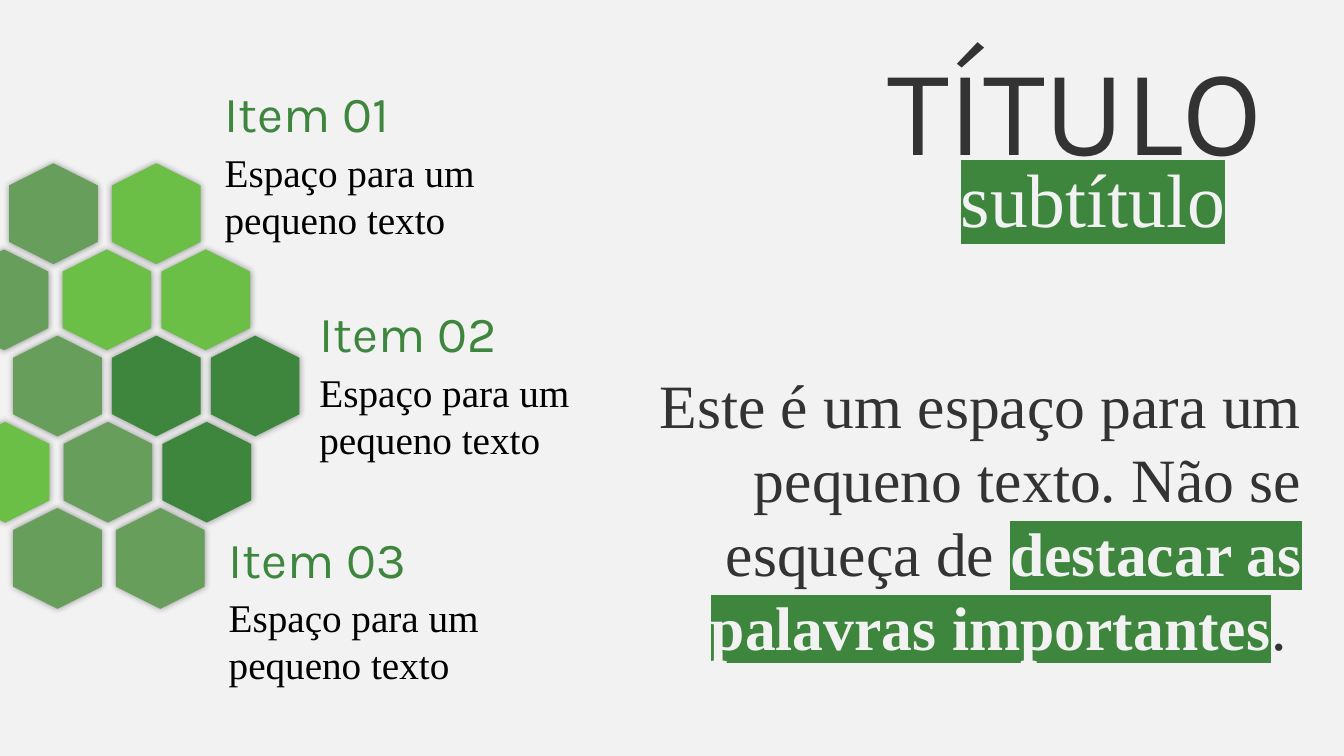
from lxml import etree
from pptx import Presentation
from pptx.dml.color import RGBColor
from pptx.enum.shapes import MSO_SHAPE
from pptx.enum.text import MSO_AUTO_SIZE, PP_ALIGN
from pptx.oxml.ns import qn
from pptx.util import Inches, Pt

HEXAGON = MSO_SHAPE.HEXAGON
GROW = MSO_AUTO_SIZE.SHAPE_TO_FIT_TEXT
LEFT, RIGHT = PP_ALIGN.LEFT, PP_ALIGN.RIGHT

COLORS = {
    "paper": "F2F2F2", "ink": "333333", "black": "000000",
    "dark": "3E863D", "sage": "679E5B", "lime": "6BBF47",
}
HEADING_FONT, BODY_FONT = "Karla", "Times New Roman"

TITLE, SUBTITLE = "TÍTULO", "subtítulo"
# Each span: text, whether it is highlighted
MESSAGE = [
    ("Este é um espaço para um pequeno texto. Não se esqueça de ", False),
    ("destacar as palavras importantes", True),
    (". ", False),
]
# Heading, text, left, top
ITEMS = [
    ("Item 01", "Espaço para um pequeno texto", 2.13, 0.77),
    ("Item 02", "Espaço para um pequeno texto", 3.07, 2.95),
    ("Item 03", "Espaço para um pequeno texto", 2.17, 5.19),
]
ITEM_TEXT_DROP = 0.65

# Honeycomb rows from top to bottom: left and colour of each cell
HONEYCOMB = [
    [(0.03, "sage"), (1.05, "lime")],
    [(-0.46, "sage"), (0.56, "lime"), (1.54, "lime")],
    [(0.07, "sage"), (1.05, "dark"), (2.03, "dark")],
    [(-0.45, "lime"), (0.57, "sage"), (1.55, "dark")],
    [(0.07, "sage"), (1.09, "sage")],
]
HONEYCOMB_TOP, ROW_PITCH = 1.68, 0.855
CELL_WIDTH, CELL_HEIGHT = 1, 0.88


def color(name):
    return RGBColor.from_string(COLORS[name])


def add_color_element(parent, tag, name):
    element = etree.SubElement(parent, qn(tag))
    return etree.SubElement(element, qn("a:srgbClr"), val=COLORS[name])


def highlight(span):
    """Light text on a dark green marker."""
    span.font.color.rgb = color("paper")
    properties = span.font._element
    add_color_element(properties, "a:highlight", "dark")


def add_glow_shadow(shape):
    """Soft shadow spread evenly on all sides."""
    shape.shadow.inherit = False
    effects = shape._element.spPr.find(qn("a:effectLst"))
    tone = add_color_element(effects, "a:outerShdw", "black")
    tone.getparent().set("blurRad", str(Pt(5)))
    etree.SubElement(tone, qn("a:alpha"), val="40000")


def add_cell(page, left, top, fill):
    cell = page.shapes.add_shape(
        HEXAGON, Inches(left), Inches(top), Inches(CELL_WIDTH), Inches(CELL_HEIGHT))
    cell.rotation = 90
    cell.fill.solid()
    cell.fill.fore_color.rgb = color(fill)
    cell.line.fill.background()
    add_glow_shadow(cell)


def add_text(page, frame, spans, font, size, ink, wrap=False, align=LEFT):
    box = page.shapes.add_textbox(*(Inches(length) for length in frame))
    box.text_frame.word_wrap = wrap
    box.text_frame.auto_size = GROW
    para = box.text_frame.paragraphs[0]
    para.alignment = align
    para.font.name = font
    para.font.size = Pt(size)
    para.font.color.rgb = color(ink)
    for text, marked in spans:
        span = para.add_run()
        span.text = text
        if marked:
            highlight(span)
            span.font.bold = len(spans) > 1


deck = Presentation()
deck.slide_width, deck.slide_height = Inches(13.33), Inches(7.5)
page = deck.slides.add_slide(deck.slide_layouts[6])
page.background.fill.solid()
page.background.fill.fore_color.rgb = color("paper")

add_text(page, (8.7, 0.27, 4.32, 1.58), [(TITLE, False)], HEADING_FONT, 88, "ink")
add_text(page, (9.43, 1.46, 2.85, 1.01), [(SUBTITLE, True)], BODY_FONT, 54, "paper")

for row, cells in enumerate(HONEYCOMB):
    for left, fill in cells:
        add_cell(page, left, HONEYCOMB_TOP + row * ROW_PITCH, fill)

for heading, text, left, top in ITEMS:
    add_text(page, (left, top, 1.99, 0.71), [(heading, False)],
             HEADING_FONT, 36, "dark")
    add_text(page, (left, top + ITEM_TEXT_DROP, 3.86, 1.04), [(text, False)],
             BODY_FONT, 28, "black", wrap=True)

add_text(page, (6.36, 3.59, 6.65, 3.06), MESSAGE, BODY_FONT, 44, "ink",
         wrap=True, align=RIGHT)

deck.save("out.pptx")
